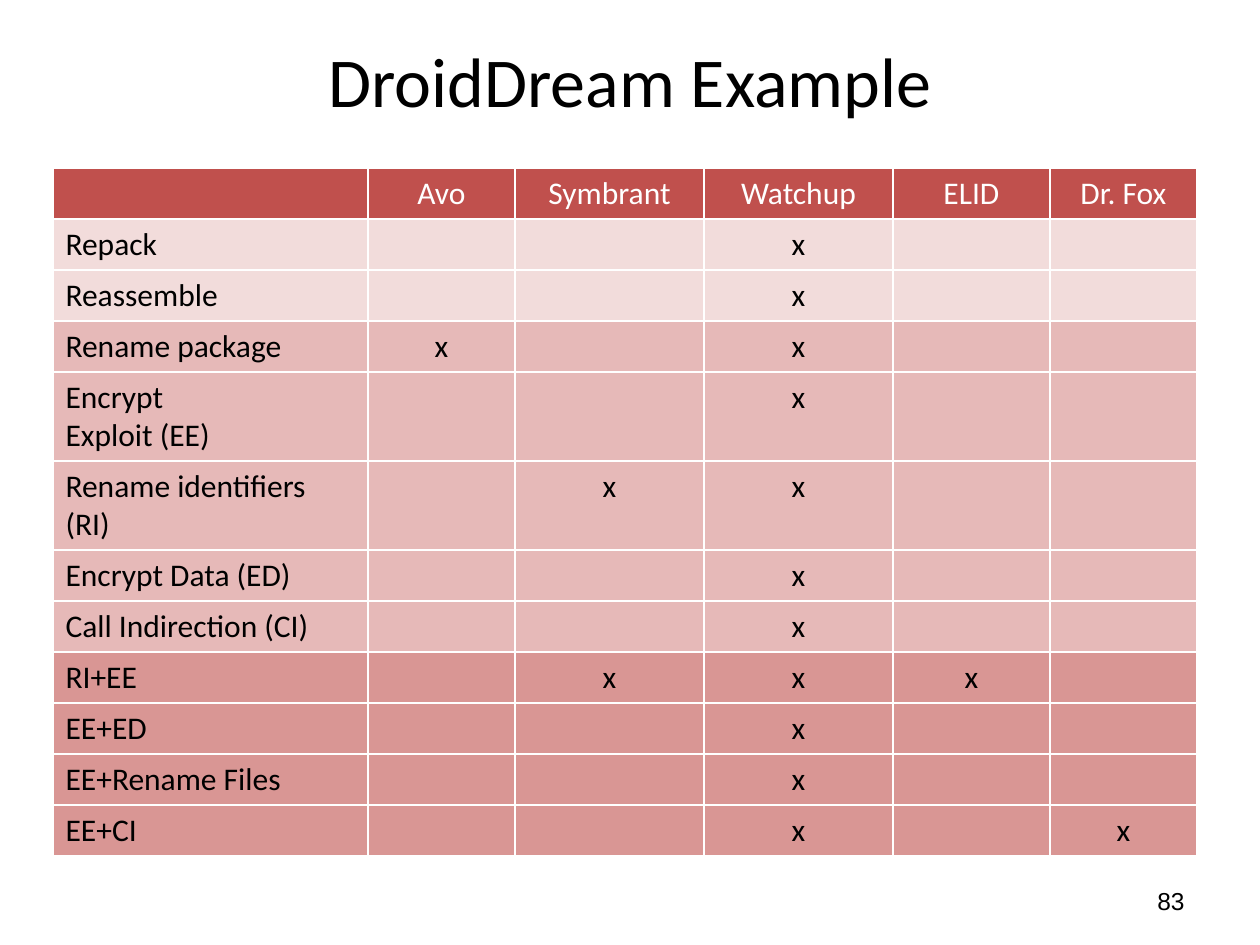
from lxml.etree import SubElement
from pptx import Presentation
from pptx.dml.color import RGBColor
from pptx.enum.text import MSO_ANCHOR as ANCHOR, PP_ALIGN as ALIGN
from pptx.oxml.ns import qn
from pptx.util import Emu, Pt

PX = 914400 / 126
BLACK = RGBColor(0x00, 0x00, 0x00)
WHITE = RGBColor(0xFF, 0xFF, 0xFF)
RED = RGBColor(0xC0, 0x50, 0x4D)
PALE = RGBColor(0xF2, 0xDC, 0xDB)
LIGHT = RGBColor(0xE6, 0xB9, 0xB8)
MEDIUM = RGBColor(0xD9, 0x96, 0x94)

COLUMN_WIDTHS = [315, 147, 189, 189, 157, 147]
LINE_HEIGHT, ROW_HEIGHT, TALL_ROW_HEIGHT = 38, 51, 89
SCANNERS = ["Avo", "Symbrant", "Watchup", "ELID", "Dr. Fox"]
TRANSFORMS = [
    ("Repack", PALE, [3]),
    ("Reassemble", PALE, [3]),
    ("Rename package", LIGHT, [1, 3]),
    ("Encrypt\nExploit (EE)", LIGHT, [3]),
    ("Rename identifiers (RI)", LIGHT, [2, 3]),
    ("Encrypt Data (ED)", LIGHT, [3]),
    ("Call Indirection (CI)", LIGHT, [3]),
    ("RI+EE", MEDIUM, [2, 3, 4]),
    ("EE+ED", MEDIUM, [3]),
    ("EE+Rename Files", MEDIUM, [3]),
    ("EE+CI", MEDIUM, [3, 5]),
]
TALL_ROWS = [4, 5]


def px(n):
    return Emu(round(n * PX))


def write(tf, text, size, font, color, align):
    tf.text = text
    for p in tf.paragraphs:
        p.alignment = align
        for r in p.runs:
            r.font.size = Pt(size)
            r.font.name = font
            r.font.bold = False
            r.font.color.rgb = color


def add_text(slide, box, text, size, font, align):
    tf = slide.shapes.add_textbox(*map(px, box)).text_frame
    tf.word_wrap = True
    tf.vertical_anchor = ANCHOR.MIDDLE
    write(tf, text, size, font, BLACK, align)


def style_cell(cell, text, fill, color, align):
    write(cell.text_frame, text, 18, "Calibri", color, align)
    tcPr = cell._tc.get_or_add_tcPr()
    for side in ("lnL", "lnR", "lnT", "lnB"):
        ln = SubElement(tcPr, qn(f"a:{side}"), w=str(Pt(1)))
        SubElement(SubElement(ln, qn("a:solidFill")), qn("a:srgbClr"), val=str(WHITE))
    cell.fill.solid()
    cell.fill.fore_color.rgb = fill


def add_detection_table(slide, left, top):
    heights = [TALL_ROW_HEIGHT if i in TALL_ROWS else ROW_HEIGHT
               for i in range(len(TRANSFORMS) + 1)]
    box = (left, top, sum(COLUMN_WIDTHS), sum(heights))
    table = slide.shapes.add_table(len(heights), len(COLUMN_WIDTHS), *map(px, box)).table
    table.horz_banding = False
    for column, width in zip(table.columns, COLUMN_WIDTHS):
        column.width = px(width)
    for row, height in zip(table.rows, heights):
        row.height = px(height)
    for c, name in enumerate([""] + SCANNERS):
        style_cell(table.cell(0, c), name, RED, WHITE, ALIGN.CENTER)
    for i, (name, fill, misses) in enumerate(TRANSFORMS, 1):
        style_cell(table.cell(i, 0), name, fill, BLACK, ALIGN.LEFT)
        for c in range(1, len(COLUMN_WIDTHS)):
            mark = "x" if c in misses else ""
            style_cell(table.cell(i, c), mark, fill, BLACK, ALIGN.CENTER)


def main():
    prs = Presentation()
    prs.slide_width, prs.slide_height = px(1260), px(945)
    slide = prs.slides.add_slide(prs.slide_layouts[6])
    add_text(slide, (63, 0, 1134, 158), "DroidDream Example", 40, "Calibri", ALIGN.CENTER)
    add_detection_table(slide, 53, 168)
    add_text(slide, (903, 876, 294, 50), "83", 14, "Arial", ALIGN.RIGHT)
    prs.save("out.pptx")


if __name__ == "__main__":
    main()
